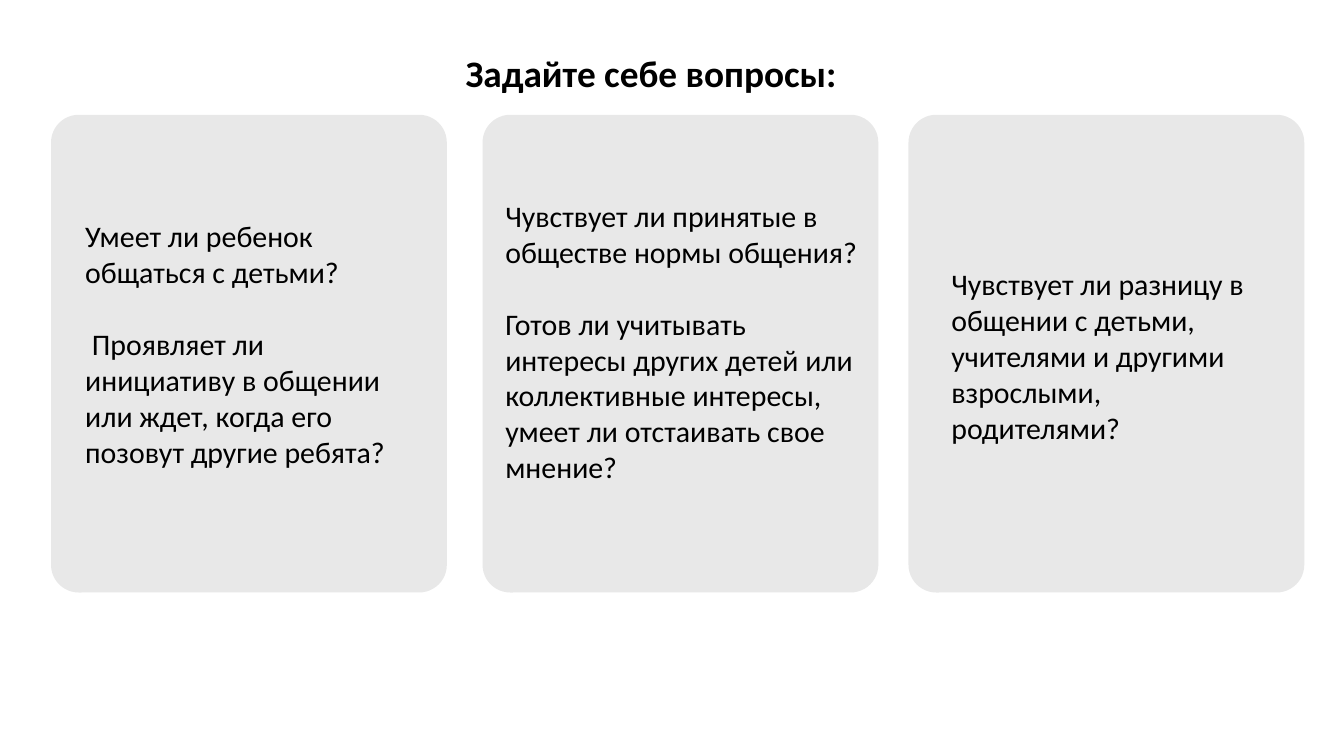
from pptx import Presentation
from pptx.dml.color import RGBColor
from pptx.enum.shapes import MSO_SHAPE
from pptx.enum.text import PP_ALIGN
from pptx.util import Cm, Pt

ROUND = MSO_SHAPE.ROUNDED_RECTANGLE
LEFT, CENTER = PP_ALIGN.LEFT, PP_ALIGN.CENTER
FONT, INK, GREY = "Calibri", "000000", "E8E8E8"
SIZE, LINE = 32, 1.37
TOP, WIDTH, HEIGHT = 4.34, 14.96, 18.06

# Card left; text offset x, y and width; questions split into lines
CARDS = [
    (1.93, 1.04, 3.78, 13.11, [
        ["Умеет ли ребенок", "общаться с детьми?"],
        [" Проявляет ли", "инициативу в общении", "или ждет, когда его",
         "позовут другие ребята?"],
    ]),
    (18.24, 0.61, 3, 14.3, [
        ["Чувствует ли принятые в", "обществе нормы общения?"],
        ["Готов ли учитывать", "интересы других детей или",
         "коллективные интересы,", "умеет ли отстаивать свое", "мнение?"],
    ]),
    (34.34, 1.37, 5.59, 11.71, [
        ["Чувствует ли разницу в", "общении с детьми,", "учителями и другими",
         "взрослыми,", "родителями?"],
    ]),
]


def color(code):
    """Turn a hex string into a colour."""
    return RGBColor.from_string(code)


def add_text(slide, box, groups, size=SIZE, align=LEFT, bold=False):
    """Write groups of lines in a box, with one line of space between groups."""
    frame = slide.shapes.add_textbox(*map(Cm, box)).text_frame
    frame.word_wrap = True
    for group in groups:
        for index, line in enumerate(group):
            first = group is groups[0] and index == 0
            para = frame.paragraphs[0] if first else frame.add_paragraph()
            para.text = line
            para.alignment = align
            if index == 0 and not first:
                para.space_before = Cm(LINE)
            font = para.font
            font.name, font.size, font.bold = FONT, Pt(size), bold
            font.color.rgb = color(INK)


def add_title(slide, box):
    """Write the heading centred in its box."""
    add_text(slide, box, [["Задайте себе вопросы:"]], 40, CENTER, True)


def add_card(slide, box, dx, dy, width, groups):
    """Draw a rounded card and place its questions inside."""
    left, top = box[:2]
    card = slide.shapes.add_shape(ROUND, *map(Cm, box))
    card.adjustments[0] = 0.07
    card.shadow.inherit = False
    card.fill.solid()
    card.fill.fore_color.rgb = color(GREY)
    card.line.fill.background()
    count = sum(map(len, groups)) + len(groups) - 1
    area = (left + dx, top + dy, width, count * LINE + 0.25)
    add_text(slide, area, groups)


def main():
    """Build and save the slide."""
    deck = Presentation()
    deck.slide_width, deck.slide_height = Cm(50.8), Cm(28.58)
    slide = deck.slides.add_slide(deck.slide_layouts[6])
    for left, *rest in CARDS:
        add_card(slide, (left, TOP, WIDTH, HEIGHT), *rest)
    add_title(slide, (17.27, 1.78, 14.68, 1.96))
    deck.save("out.pptx")


if __name__ == "__main__":
    main()
